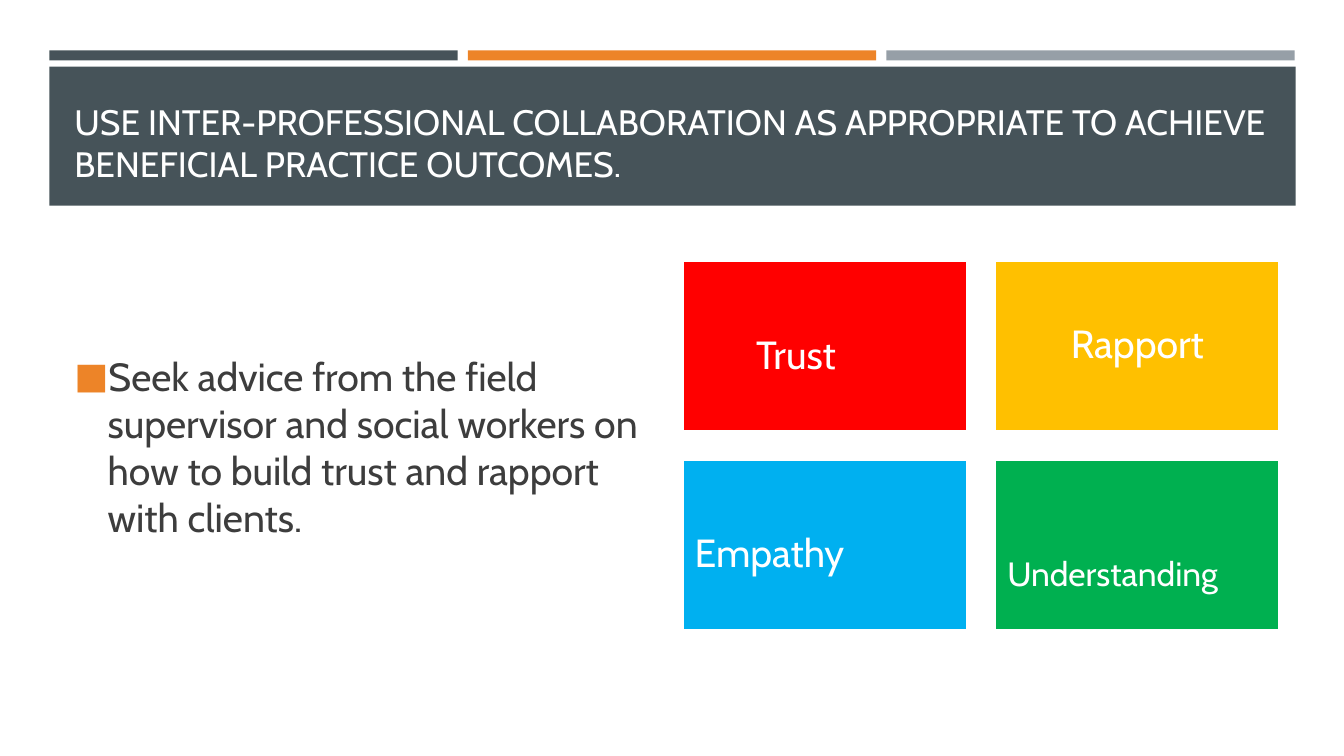
from lxml import etree
from pptx import Presentation, util as u
from pptx.dml.color import RGBColor
from pptx.enum import shapes, text
from pptx.oxml.ns import qn

PX = 9144  # EMU, 100 px to the inch
FONT = "Cabin"
WHITE = RGBColor(0xFF, 0xFF, 0xFF)
SLATE = RGBColor(0x46, 0x53, 0x59)
ORANGE = RGBColor(0xED, 0x84, 0x28)
GREY = RGBColor(0x96, 0x9F, 0xA7)
INK = RGBColor(0x3D, 0x3D, 0x3D)
RED = RGBColor(0xFF, 0x00, 0x00)
AMBER = RGBColor(0xFF, 0xC0, 0x00)
BLUE = RGBColor(0x00, 0xB0, 0xF0)
GREEN = RGBColor(0x00, 0xB0, 0x50)

CENTER, LEFT = text.PP_ALIGN.CENTER, text.PP_ALIGN.LEFT
# label, fill, size, alignment, extra top inset, extra right inset
CARDS = [
    ("Trust", RED, 28, CENTER, 20, 57),
    ("Rapport", AMBER, 28, CENTER, 0, 0),
    ("Empathy", BLUE, 28, LEFT, 20, 0),
    ("Understanding", GREEN, 24, LEFT, 61, 0),
]


def emu(*lengths):
    return [u.Emu(n * PX) for n in lengths]


def add_rect(s, box, fill):
    sp = s.shapes.add_shape(shapes.MSO_SHAPE.RECTANGLE, *emu(*box))
    sp.shadow.inherit = False
    sp.fill.solid()
    sp.fill.fore_color.rgb = fill
    sp.line.fill.background()
    return sp


def write(sp, words, size, color, anchor, align=LEFT):
    tf = sp.text_frame
    tf.word_wrap = True
    tf.vertical_anchor = anchor
    p = tf.paragraphs[0]
    p.text = words
    p.alignment = align
    p.font.name = FONT
    p.font.size = u.Pt(size)
    p.font.color.rgb = color
    return p


def add_header(s, x, y, w):
    """Three accent bars above the title band."""
    gap = 10
    bar_w = (w - 2 * gap) // 3
    for i, color in enumerate((SLATE, ORANGE, GREY)):
        add_rect(s, (x + i * (bar_w + gap), y, bar_w, 10), color)
    add_rect(s, (x, y + 16, w, 138), SLATE)
    title = s.shapes.add_textbox(*emu(x + 15, y + 41, w - 30, 97))
    write(title, "USE INTER-PROFESSIONAL COLLABORATION AS APPROPRIATE TO ACHIEVE "
          "BENEFICIAL PRACTICE OUTCOMES.", 25.2, WHITE, text.MSO_ANCHOR.BOTTOM)


def add_advice(s, x, y, w, h):
    body = s.shapes.add_textbox(*emu(x, y, w, h))
    p = write(body, "Seek advice from the field supervisor and social workers on "
              "how to build trust and rapport with clients.",
              28, INK, text.MSO_ANCHOR.MIDDLE)
    p.space_before, p.space_after = u.Pt(5.6), u.Pt(6)
    add_bullet(p, 33)


def add_bullet(p, indent):
    pPr = p._p.get_or_add_pPr()
    pPr.set("marL", str(indent * PX))
    pPr.set("indent", str(-indent * PX))
    color = etree.Element(qn("a:buClr"))
    etree.SubElement(color, qn("a:srgbClr"), val=str(ORANGE))
    bullet = [
        color,
        etree.Element(qn("a:buSzPct"), val="92000"),
        etree.Element(qn("a:buFont"), typeface=FONT),
        etree.Element(qn("a:buChar"), char="■"),
    ]
    at = len(pPr.findall(qn("a:spcBef")) + pPr.findall(qn("a:spcAft")))
    pPr[at:at] = bullet


def add_cards(s, x, y, w, h):
    """Two by two grid of coloured cards."""
    gap_x, gap_y, inset = 28, 28, 12
    card_w, card_h = (w - gap_x) // 2, (h - gap_y) // 2
    for i, (label, fill, size, align, top, right) in enumerate(CARDS):
        row, col = divmod(i, 2)
        card = add_rect(s, (x + col * (card_w + gap_x), y + row * (card_h + gap_y),
                            card_w, card_h), fill)
        card.line.color.rgb = WHITE
        card.line.width = u.Pt(1.75)
        p = write(card, label, size, WHITE, text.MSO_ANCHOR.MIDDLE, align)
        p.line_spacing = 0.9
        tf = card.text_frame
        tf.margin_left, tf.margin_top, tf.margin_right, tf.margin_bottom = emu(
            inset, inset + top, inset + right, inset)


def main():
    prs = Presentation()
    prs.slide_width, prs.slide_height = emu(1333, 750)
    s = prs.slides.add_slide(prs.slide_layouts[6])
    add_header(s, 49, 50, 1236)
    add_advice(s, 64, 244, 593, 397)
    add_cards(s, 677, 259, 592, 366)
    prs.save("out.pptx")


if __name__ == "__main__":
    main()
